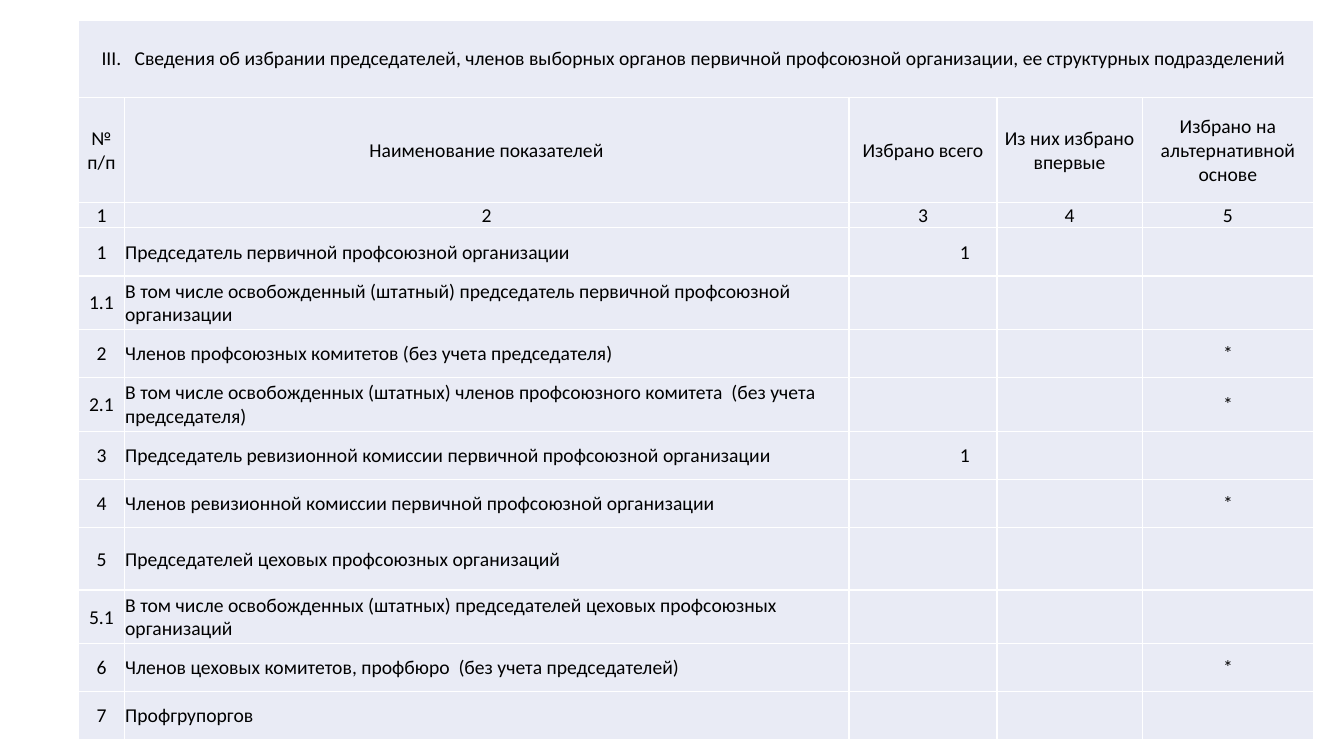
from pptx import Presentation
from pptx.dml.color import RGBColor
from pptx.enum.text import MSO_ANCHOR, PP_ALIGN
from pptx.oxml import parse_xml
from pptx.oxml.ns import nsdecls
from pptx.util import Pt

COLORS = {"cell": "E9EBF5", "text": "000000", "border": "FFFFFF"}
FONT, SIZE = "Calibri", 14

TITLE = ("III.   Сведения об избрании председателей, членов выборных органов "
         "первичной профсоюзной организации, ее структурных подразделений ")
HEADER = ["№ п/п", "Наименование показателей", "Избрано всего",
          "Из них избрано впервые", "Избрано на альтернативной основе"]
NUMBERS = ["1", "2", "3", "4", "5"]
INDICATORS = [
    ("1", "Председатель первичной профсоюзной организации", "1", "", ""),
    ("1.1", "В том числе освобожденный (штатный) председатель первичной "
            "профсоюзной организации", "", "", ""),
    ("2", "Членов профсоюзных комитетов (без учета председателя)", "", "", "*"),
    ("2.1", "В том числе освобожденных (штатных) членов профсоюзного комитета  "
            "(без учета председателя)", "", "", "*"),
    ("3", "Председатель ревизионной комиссии первичной профсоюзной организации",
     "1", "", ""),
    ("4", "Членов ревизионной комиссии первичной профсоюзной организации",
     "", "", "*"),
    ("5", "Председателей цеховых профсоюзных организаций", "", "", ""),
    ("5.1", "В том числе освобожденных (штатных) председателей цеховых "
            "профсоюзных организаций", "", "", ""),
    ("6", "Членов цеховых комитетов, профбюро  (без учета председателей)",
     "", "", "*"),
    ("7", "Профгрупоргов", "", "", ""),
]
ROWS = [[TITLE, "", "", "", ""], HEADER, NUMBERS, *INDICATORS]

LEFT, TOP = 56.3, 14.4
COL_WIDTHS = [32.4, 517.7, 105.8, 103.7, 122.4]
ROW_HEIGHTS = [55, 75.5, 16.5, 34.5, 38.2, 34.5, 38.2,
               34.5, 34.5, 44.5, 38.2, 34.5, 34]
FIRST_INDICATOR = len(ROWS) - len(INDICATORS)
NAME_COL, TOTAL_COL = 1, 2
MARGIN, TOTAL_INDENT = 0.72, 19.5


def set_borders(cell):
    tc_pr = cell._tc.get_or_add_tcPr()
    for i, side in enumerate(("lnL", "lnR", "lnT", "lnB")):
        tc_pr.insert(i, parse_xml(
            f'<a:{side} {nsdecls("a")} w="{Pt(1)}"><a:solidFill>'
            f'<a:srgbClr val="{COLORS["border"]}"/></a:solidFill></a:{side}>'))


def fill_cell(cell, text, align, right_margin):
    cell.fill.solid()
    cell.fill.fore_color.rgb = RGBColor.from_string(COLORS["cell"])
    set_borders(cell)
    if not text:
        return
    cell.vertical_anchor = MSO_ANCHOR.MIDDLE
    cell.margin_left = cell.margin_top = Pt(MARGIN)
    cell.margin_right, cell.margin_bottom = Pt(right_margin), Pt(0)
    p = cell.text_frame.paragraphs[0]
    p.alignment = align
    r = p.add_run()
    r.text = text
    r.font.name, r.font.size = FONT, Pt(SIZE)
    r.font.color.rgb = RGBColor.from_string(COLORS["text"])


def main():
    prs = Presentation()
    prs.slide_width, prs.slide_height = Pt(960), Pt(540)
    s = prs.slides.add_slide(prs.slide_layouts[6])
    table = s.shapes.add_table(
        len(ROWS), len(COL_WIDTHS), Pt(LEFT), Pt(TOP),
        Pt(sum(COL_WIDTHS)), Pt(sum(ROW_HEIGHTS))).table
    table.first_row = table.horz_banding = False
    for column, width in zip(table.columns, COL_WIDTHS):
        column.width = Pt(width)
    for row, height in zip(table.rows, ROW_HEIGHTS):
        row.height = Pt(height)
    table.cell(0, 0).merge(table.cell(0, len(COL_WIDTHS) - 1))

    for i, row in enumerate(ROWS):
        for j, text in enumerate(row):
            align, right_margin = PP_ALIGN.CENTER, MARGIN
            if i >= FIRST_INDICATOR and j == NAME_COL:
                align = PP_ALIGN.LEFT
            elif i >= FIRST_INDICATOR and j == TOTAL_COL:
                align, right_margin = PP_ALIGN.RIGHT, TOTAL_INDENT
            fill_cell(table.cell(i, j), text, align, right_margin)
    prs.save("out.pptx")


if __name__ == "__main__":
    main()
